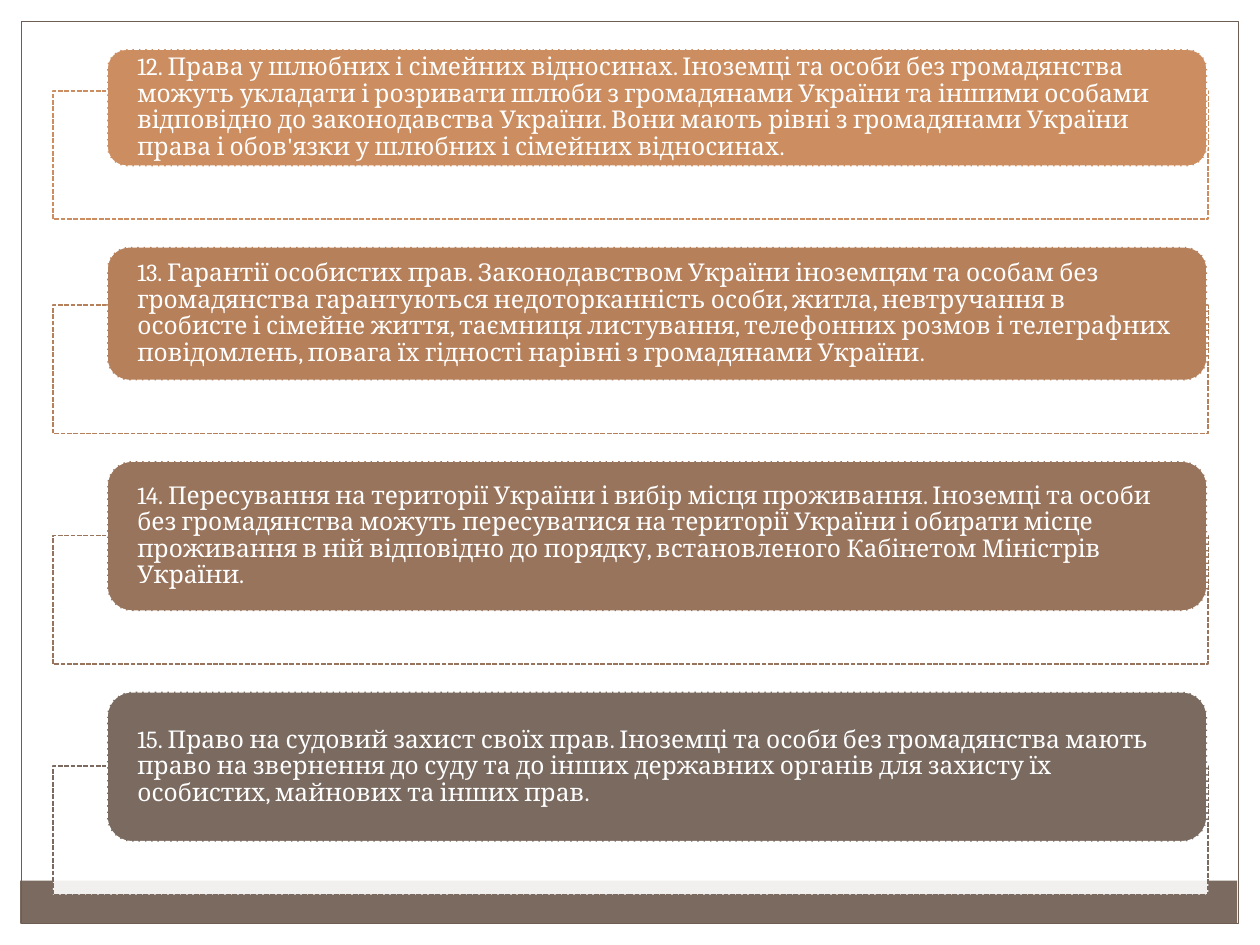
from pptx import Presentation
from pptx.dml.color import RGBColor
from pptx.enum.dml import MSO_LINE
from pptx.enum.shapes import MSO_SHAPE
from pptx.enum.text import MSO_ANCHOR, PP_ALIGN
from pptx.oxml.ns import qn
from pptx.util import Inches, Pt
from lxml.etree import SubElement

# (label height, colour, text)
RIGHTS = [
    (0.93, "CC8E60",
     "12. Права у шлюбних і сімейних відносинах. Іноземці та особи без громадянства "
     "можуть укладати і розривати шлюби з громадянами України та іншими особами "
     "відповідно до законодавства України. Вони мають рівні з громадянами України "
     "права і обов'язки у шлюбних і сімейних відносинах."),
    (1.06, "B6805B",
     "13. Гарантії особистих прав. Законодавством України іноземцям та особам без "
     "громадянства гарантуються недоторканність особи, житла, невтручання в "
     "особисте і сімейне життя, таємниця листування, телефонних розмов і телеграфних "
     "повідомлень, повага їх гідності нарівні з громадянами України."),
    (1.19, "99745C",
     "14. Пересування на території України і вибір місця проживання. Іноземці та особи "
     "без громадянства можуть пересуватися на території України і обирати місце "
     "проживання в ній відповідно до порядку, встановленого Кабінетом Міністрів "
     "України."),
    (1.19, "7A6A60",
     "15. Право на судовий захист своїх прав. Іноземці та особи без громадянства мають "
     "право на звернення до суду та до інших державних органів для захисту їх "
     "особистих, майнових та інших прав."),
]
WHITE = "FFFFFF"
FIRST_TOP = 0.39
FRAME_LEFT, FRAME_WIDTH, FRAME_HEIGHT = 0.42, 9.17, 1.02
LABEL_LEFT, LABEL_WIDTH = 0.85, 8.73
OVERLAP = 0.6      # how far a label reaches down into its frame
GAP = 0.22         # from a frame to the next label
TEXT_INSET = 0.24
CORNER = 0.1667    # corner radius as a share of label height
CORNER_INSET = 0.29  # share of the radius that already insets the text


def rgb(value):
    return RGBColor.from_string(value)


def add_box(slide, kind, left, top, width, height, fill=None, line=None,
            line_width=0.9, dash=None):
    box = slide.shapes.add_shape(
        kind, Inches(left), Inches(top), Inches(width), Inches(height))
    box.shadow.inherit = False
    if fill:
        box.fill.solid()
        box.fill.fore_color.rgb = rgb(fill)
    else:
        box.fill.background()
    if line:
        box.line.color.rgb = rgb(line)
        box.line.width = Pt(line_width)
        box.line.dash_style = dash
    else:
        box.line.fill.background()
    return box


def set_opacity(box, percent):
    color = box._element.spPr.find(qn("a:solidFill"))[0]
    SubElement(color, qn("a:alpha"), val=str(percent * 1000))


def add_right(slide, top, height, color, text):
    """Draw one frame with its label; return the bottom of the frame."""
    frame_top = top + height - OVERLAP
    frame = add_box(slide, MSO_SHAPE.RECTANGLE, FRAME_LEFT, frame_top, FRAME_WIDTH,
                    FRAME_HEIGHT, WHITE, color, dash=MSO_LINE.SQUARE_DOT)
    set_opacity(frame, 90)

    label = add_box(slide, MSO_SHAPE.ROUNDED_RECTANGLE, LABEL_LEFT, top, LABEL_WIDTH,
                    height, color, WHITE, dash=MSO_LINE.SQUARE_DOT)
    label.adjustments[0] = CORNER
    body = label.text_frame
    body.word_wrap = True
    body.vertical_anchor = MSO_ANCHOR.MIDDLE
    body.margin_left = body.margin_right = Inches(
        TEXT_INSET - CORNER_INSET * CORNER * height)
    body.margin_top = body.margin_bottom = 0
    paragraph = body.paragraphs[0]
    paragraph.text = text
    paragraph.alignment = PP_ALIGN.LEFT
    paragraph.line_spacing = 0.9
    paragraph.font.name = "Cambria"
    paragraph.font.size = Pt(14)
    paragraph.font.color.rgb = rgb(WHITE)
    return frame_top + FRAME_HEIGHT


def main():
    deck = Presentation()
    deck.slide_width, deck.slide_height = Inches(10), Inches(7.5)
    slide = deck.slides.add_slide(deck.slide_layouts[6])

    add_box(slide, MSO_SHAPE.RECTANGLE, 0.16, 6.99, 9.66, 0.34, fill="7A6A60")
    add_box(slide, MSO_SHAPE.RECTANGLE, 0.17, 0.17, 9.66, 7.16,
            line="6C5E55", line_width=0.75)

    top = FIRST_TOP
    for height, color, text in RIGHTS:
        top = add_right(slide, top, height, color, text) + GAP

    deck.save("out.pptx")


if __name__ == "__main__":
    main()
